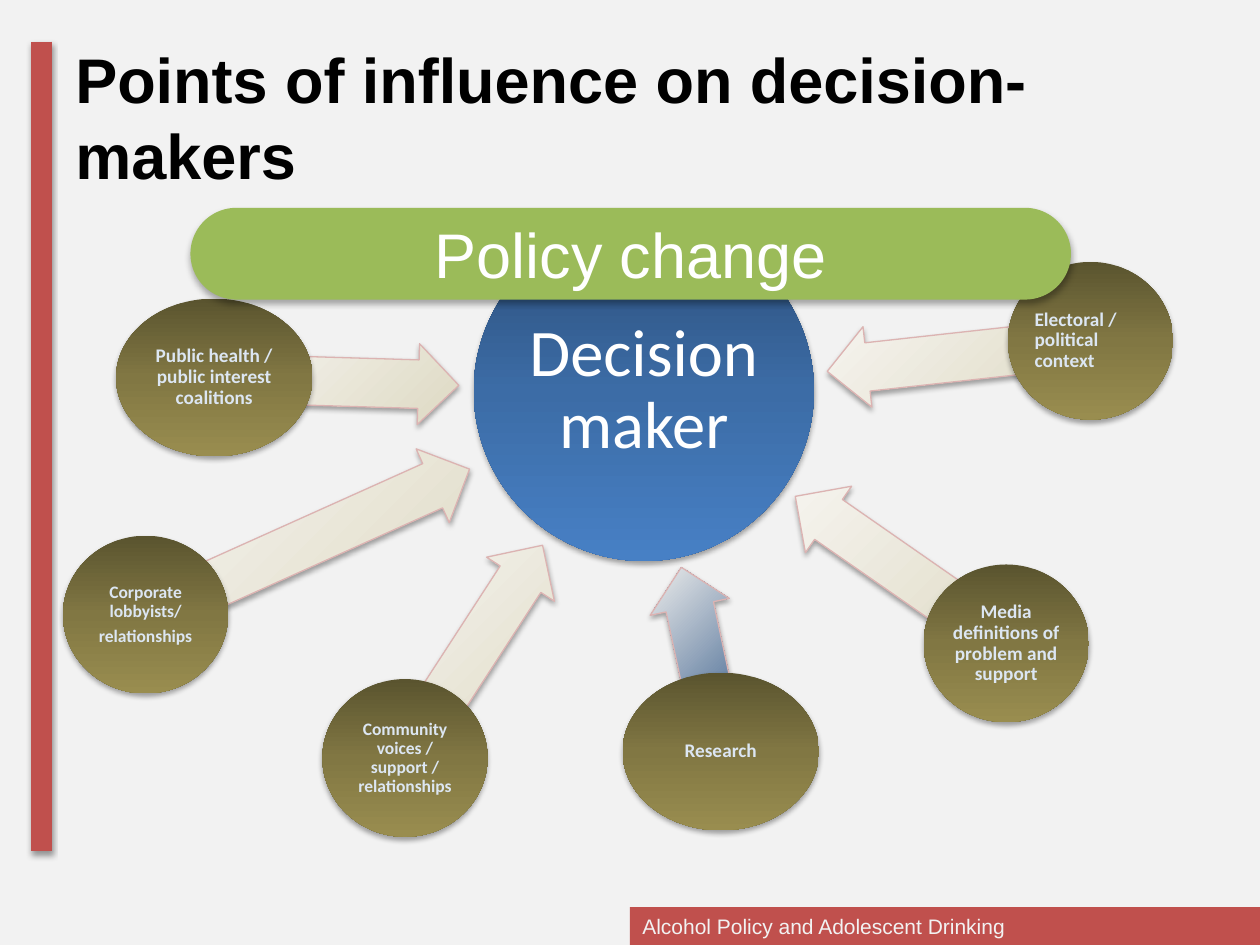
from copy import deepcopy

from lxml import etree
from pptx import Presentation
from pptx import util as u
from pptx.dml.color import RGBColor
from pptx.enum import shapes, text
from pptx.oxml.ns import qn

BACKGROUND = RGBColor(0xF2, 0xF2, 0xF2)
RED = RGBColor(0xC0, 0x50, 0x4D)
GREEN = RGBColor(0x9B, 0xBB, 0x59)
BLACK = RGBColor(0x00, 0x00, 0x00)
WHITE = RGBColor(0xFF, 0xFF, 0xFF)
PALE_BLUE = RGBColor(0xDC, 0xE6, 0xF2)
ARROW_LINE = RGBColor(0xDC, 0xB3, 0xB2)
ARROW_LIGHT = RGBColor(0xF8, 0xF6, 0xF2)
ARROW_BEIGE = RGBColor(0xDD, 0xD9, 0xC3)
ARROW_BLUE = RGBColor(0x1F, 0x49, 0x7D)
BLUES = [RGBColor(0x2A, 0x4C, 0x75), RGBColor(0x3C, 0x6C, 0xA6), RGBColor(0x47, 0x80, 0xC5)]
OLIVES = [RGBColor(0x5A, 0x54, 0x2F), RGBColor(0x81, 0x77, 0x43), RGBColor(0x99, 0x8D, 0x4F)]
CENTER = text.PP_ALIGN.CENTER
LEFT = text.PP_ALIGN.LEFT


def paint(shape, colors=None, angle=270, shadow=None):
    properties = shape._element.spPr
    if colors and len(colors) > 1:
        shape.fill.gradient()
        shape.fill.gradient_angle = angle
        stop_list = properties.find(".//" + qn("a:gsLst"))
        for extra in colors[2:]:
            stop_list.append(deepcopy(stop_list[0]))
        for index, stop in enumerate(shape.fill.gradient_stops):
            stop.position = index / (len(colors) - 1)
            stop.color.rgb = colors[index]
    elif colors:
        shape.fill.solid()
        shape.fill.fore_color.rgb = colors[0]
    effects = etree.SubElement(properties, qn("a:effectLst"))
    if shadow:
        opacity, blur, distance = shadow
        outer = etree.SubElement(effects, qn("a:outerShdw"), blurRad=str(u.Pt(blur)),
                                 dist=str(u.Pt(distance)), dir="5400000", rotWithShape="0")
        color = etree.SubElement(outer, qn("a:srgbClr"), val=str(BLACK))
        etree.SubElement(color, qn("a:alpha"), val=str(opacity * 1000))


def write(shape, lines, size, font, color, align=CENTER, bold=False, inset=None, spacing=None):
    frame = shape.text_frame
    frame.word_wrap = True
    frame.vertical_anchor = text.MSO_ANCHOR.MIDDLE
    if inset is not None:
        frame.margin_left = frame.margin_right = u.Cm(inset)
        frame.margin_top = frame.margin_bottom = u.Cm(inset)
    for index, line in enumerate(lines):
        paragraph = frame.add_paragraph() if index else frame.paragraphs[0]
        paragraph.alignment = align
        if spacing:
            paragraph.line_spacing = spacing
            paragraph.space_after = u.Pt(round(size * 0.35, 1))
        run = paragraph.add_run()
        run.text = line
        run.font.size = u.Pt(size)
        run.font.name = font
        run.font.bold = bold
        run.font.color.rgb = color


presentation = Presentation()
presentation.slide_width = u.Cm(25.4)
presentation.slide_height = u.Cm(19.05)
slide = presentation.slides.add_slide(presentation.slide_layouts[6])
slide.background.fill.solid()
slide.background.fill.fore_color.rgb = BACKGROUND

footer = slide.shapes.add_shape(shapes.MSO_SHAPE.RECTANGLE, u.Cm(12.7), u.Cm(18.29), u.Cm(12.7), u.Cm(0.76))
footer.line.fill.background()
paint(footer, [RED])
write(footer, ["Alcohol Policy and Adolescent Drinking"], 12, "Arial", BACKGROUND, LEFT)

side_bar = slide.shapes.add_connector(shapes.MSO_CONNECTOR.STRAIGHT, u.Cm(0.84), u.Cm(0.84), u.Cm(0.84), u.Cm(17.15))
side_bar.line.color.rgb = RED
side_bar.line.width = u.Pt(12)
paint(side_bar, shadow=(38, 3.1, 1.6))

decision_maker = slide.shapes.add_shape(shapes.MSO_SHAPE.OVAL, u.Cm(9.55), u.Cm(4.45), u.Cm(6.86), u.Cm(6.86))
decision_maker.line.fill.background()
paint(decision_maker, BLUES, shadow=(35, 3.1, 1.8))
write(decision_maker, ["Decision maker"], 38, "Calibri", WHITE, inset=0.08, spacing=0.9)

influences = [
    (["Community voices / support / relationships"], 10, CENTER, (6.5, 13.69, 3.33), (6.99, 12.32, 5.11, 123), ARROW_BEIGE),
    (["Corporate lobbyists/", "relationships"], 10, CENTER, (1.27, 10.8, 3.33), (2.62, 10.11, 7.16, 155.8), ARROW_BEIGE),
    (["Media definitions of problem and support"], 11, CENTER, (18.62, 11.38, 3.33), (15.57, 10.67, 5.18, 34.8), ARROW_BEIGE),
    (["Electoral / political context"], 11, LEFT, (20.32, 5.28, 3.33), (16.66, 6.38, 5.33, 353.7), ARROW_BEIGE),
    (["Research"], 11, CENTER, (12.55, 13.56, 3.96), (12.24, 12.47, 3.78, 77.9), ARROW_BLUE),
    (["Public health / public interest coalitions"], 11, CENTER, (2.34, 6.02, 3.96), (4.32, 6.88, 4.93, 181.7), ARROW_BEIGE),
]
for lines, size, align, oval_place, arrow_place, arrow_color in influences:
    left, top, width, rotation = arrow_place
    arrow = slide.shapes.add_shape(shapes.MSO_SHAPE.LEFT_ARROW, u.Cm(left), u.Cm(top), u.Cm(width), u.Cm(1.63))
    arrow.rotation = rotation
    arrow.adjustments[0] = 0.6
    arrow.adjustments[1] = 0.5
    arrow.line.color.rgb = ARROW_LINE
    arrow.line.width = u.Pt(0.75)
    paint(arrow, [arrow_color, ARROW_LIGHT], 135, (35, 3.1, 1.8))
    arrow._element.spPr.find(qn("a:gradFill")).set("rotWithShape", "0")

    left, top, width = oval_place
    oval = slide.shapes.add_shape(shapes.MSO_SHAPE.OVAL, u.Cm(left), u.Cm(top), u.Cm(width), u.Cm(3.18))
    oval.line.fill.background()
    paint(oval, OLIVES, shadow=(35, 3.1, 1.8))
    write(oval, lines, size, "Calibri", PALE_BLUE, align, True, 0.05, 0.9)

title = slide.shapes.add_textbox(u.Cm(1.27), u.Cm(0.76), u.Cm(22.86), u.Cm(3.18))
write(title, ["Points of influence on decision-makers"], 36, "Arial", BLACK, LEFT, True)

policy_change = slide.shapes.add_shape(shapes.MSO_SHAPE.ROUNDED_RECTANGLE, u.Cm(3.84), u.Cm(4.19), u.Cm(17.75), u.Cm(1.85))
policy_change.adjustments[0] = 0.5
policy_change.line.fill.background()
paint(policy_change, [GREEN], shadow=(32, 3.5, 2.2))
write(policy_change, ["Policy change"], 36, "Arial", WHITE)

presentation.save("out.pptx")
